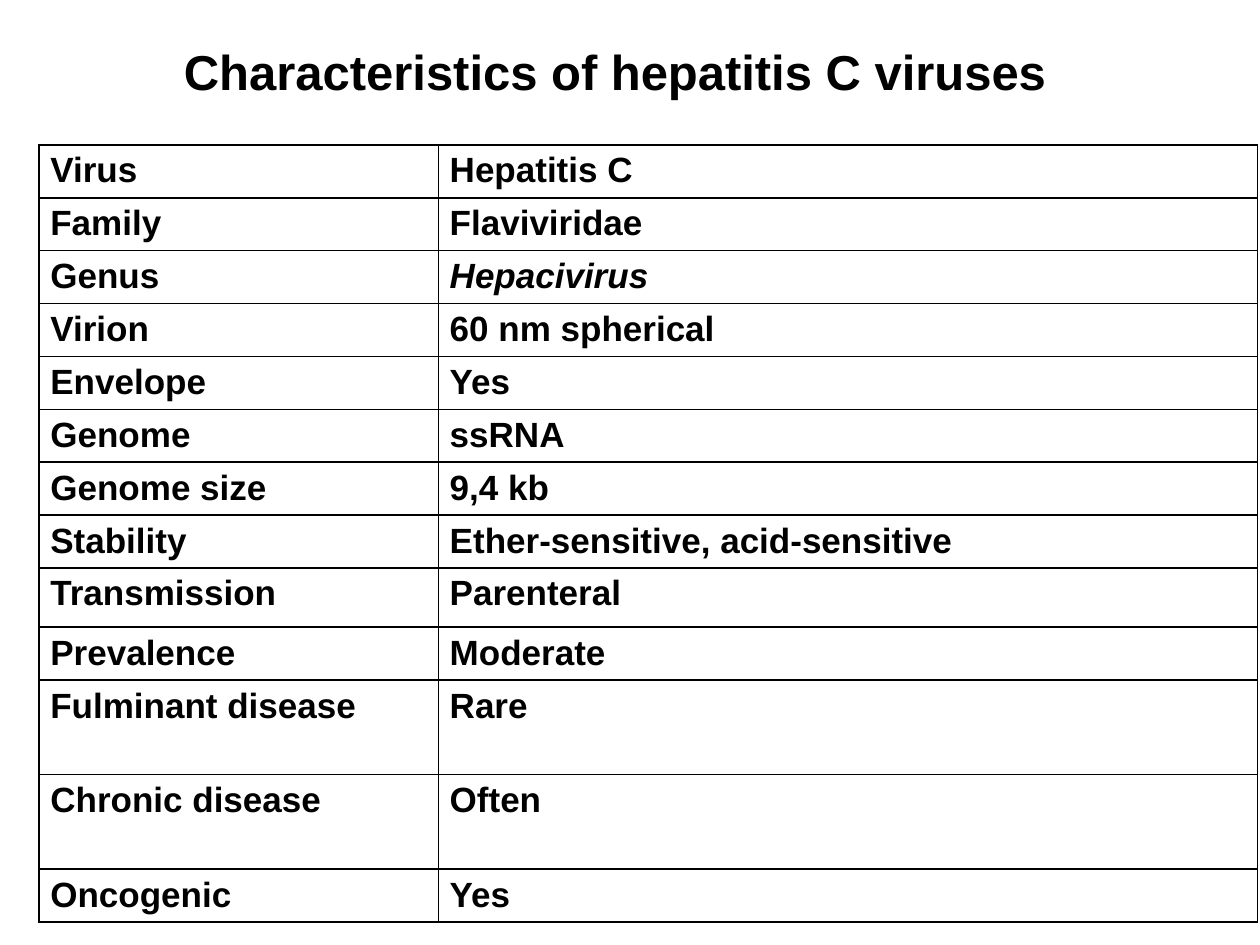
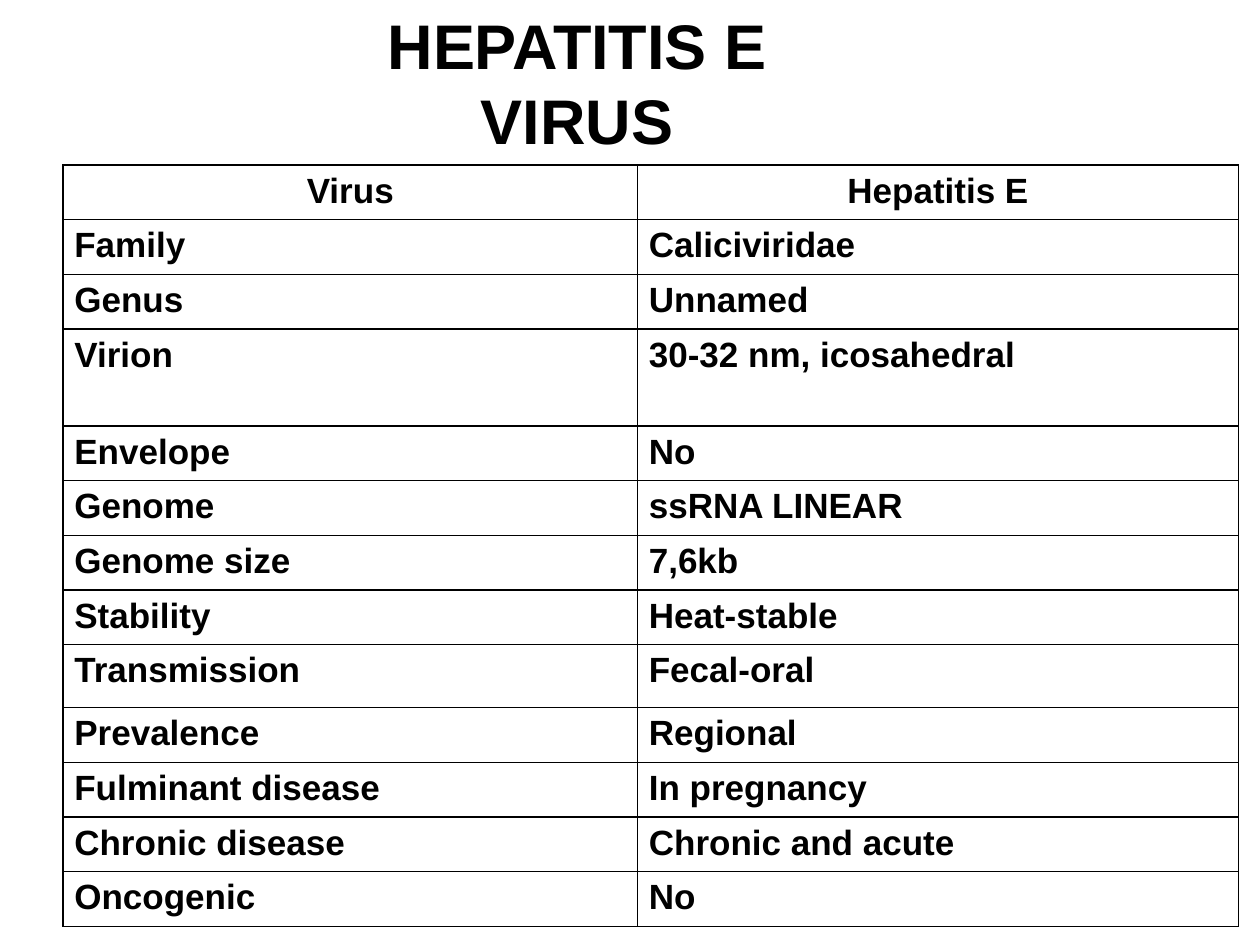
from lxml import etree
from pptx import Presentation
from pptx.dml.color import RGBColor
from pptx.enum.text import MSO_ANCHOR, PP_ALIGN
from pptx.oxml.ns import qn
from pptx.util import Inches, Pt

CENTER, LEFT = PP_ALIGN.CENTER, PP_ALIGN.LEFT
TOP = MSO_ANCHOR.TOP
COLORS = {"ink": "000000", "paper": "FFFFFF"}
FONT = "Arial"
TABLE_SIZE = 20
BORDER_WIDTH = Pt(1)

TRAITS = ["Virus", "Family", "Genus", "Virion", "Envelope", "Genome", "Genome size",
          "Stability", "Transmission", "Prevalence", "Fulminant disease",
          "Chronic disease", "Oncogenic"]
HEPATITIS_C = ["Hepatitis C", "Flaviviridae", "Hepacivirus", "60 nm spherical", "Yes",
               "ssRNA", "9,4 kb", "Ether-sensitive, acid-sensitive", "Parenteral",
               "Moderate", "Rare", "Often", "Yes"]
HEPATITIS_E = ["Hepatitis E", "Caliciviridae", "Unnamed", "30-32 nm, icosahedral", "No",
               "ssRNA LINEAR", "7,6kb", "Heat-stable", "Fecal-oral", "Regional",
               "In pregnancy", "Chronic and acute", "No"]


class VirusDeck:
    """Holds the shared style and the current page."""

    def __init__(self):
        self.deck = Presentation()
        self.deck.slide_width, self.deck.slide_height = Inches(10), Inches(7.5)
        self.page = None

    def add_page(self):
        self.page = self.deck.slides.add_slide(self.deck.slide_layouts[6])
        fill = self.page.background.fill
        fill.solid()
        fill.fore_color.rgb = RGBColor.from_string(COLORS["paper"])

    def set_text(self, frame, text, size, align, italic=False):
        para = frame.paragraphs[0]
        para.text = text
        para.alignment = align
        font = para.font
        font.name, font.size, font.bold, font.italic = FONT, Pt(size), True, italic
        font.color.rgb = RGBColor.from_string(COLORS["ink"])

    def add_title(self, text, left, top, width, height, size):
        box = self.page.shapes.add_textbox(
            Inches(left), Inches(top), Inches(width), Inches(height))
        box.text_frame.word_wrap = True
        self.set_text(box.text_frame, text, size, CENTER)

    def add_borders(self, cell):
        properties = cell._tc.get_or_add_tcPr()
        for position, side in enumerate(("lnL", "lnR", "lnT", "lnB")):
            line = etree.Element(qn("a:" + side), w=str(BORDER_WIDTH))
            fill = etree.SubElement(line, qn("a:solidFill"))
            etree.SubElement(fill, qn("a:srgbClr"), val=COLORS["ink"])
            properties.insert(position, line)

    def add_traits(self, values, left, top, widths, row_height, tall_rows,
                   header_align=LEFT, italic_trait=None):
        heights = [tall_rows.get(trait, row_height) for trait in TRAITS]
        table = self.page.shapes.add_table(
            len(TRAITS), len(widths), Inches(left), Inches(top),
            Inches(sum(widths)), Inches(sum(heights))).table
        table.first_row = table.horz_banding = False
        for column, width in zip(table.columns, widths):
            column.width = Inches(width)
        for index, (trait, value) in enumerate(zip(TRAITS, values)):
            table.rows[index].height = Inches(heights[index])
            for column, text in enumerate((trait, value)):
                cell = table.cell(index, column)
                cell.margin_left = cell.margin_right = Inches(0.09)
                cell.margin_top = cell.margin_bottom = Inches(0.05)
                cell.vertical_anchor = TOP
                cell.fill.background()
                self.add_borders(cell)
                self.set_text(cell.text_frame, text, TABLE_SIZE,
                              header_align if index == 0 else LEFT,
                              column == 1 and trait == italic_trait)


def main():
    viruses = VirusDeck()

    viruses.add_page()
    viruses.add_traits(
        HEPATITIS_C, 0.31, 1.15, (3.17, 6.5), 0.42,
        {"Transmission": 0.47, "Fulminant disease": 0.75, "Chronic disease": 0.75},
        italic_trait="Genus")
    viruses.add_title("Characteristics of hepatitis C viruses", 0.94, 0.28, 7.88, 0.57, 28)

    viruses.add_page()
    viruses.add_traits(
        HEPATITIS_E, 0.5, 1.31, (4.56, 4.77), 0.43,
        {"Virion": 0.77, "Transmission": 0.5}, header_align=CENTER)
    viruses.add_title("HEPATITIS E VIRUS", 2.34, 0, 4.48, 1.31, 36)

    viruses.deck.save("out.pptx")


if __name__ == "__main__":
    main()
